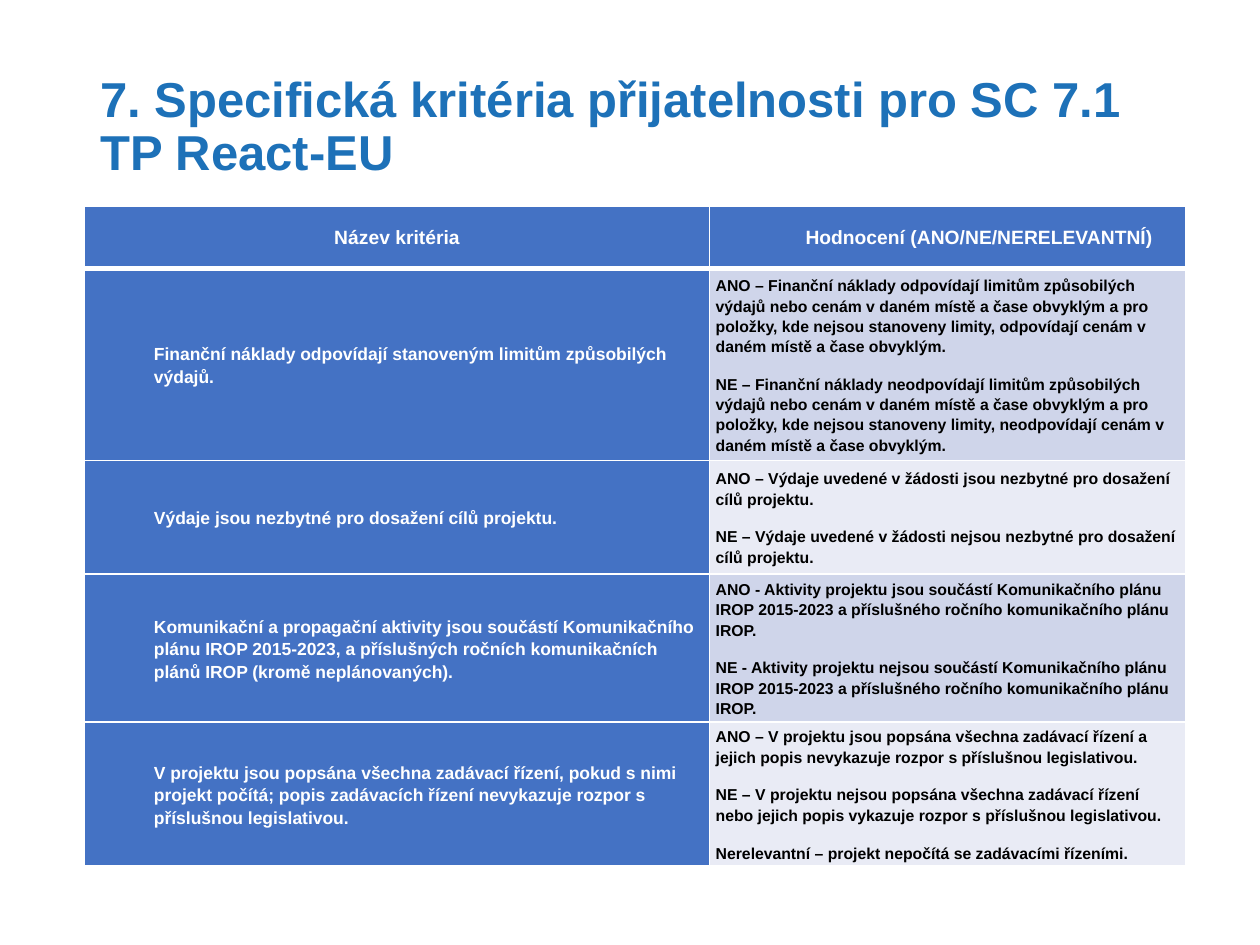
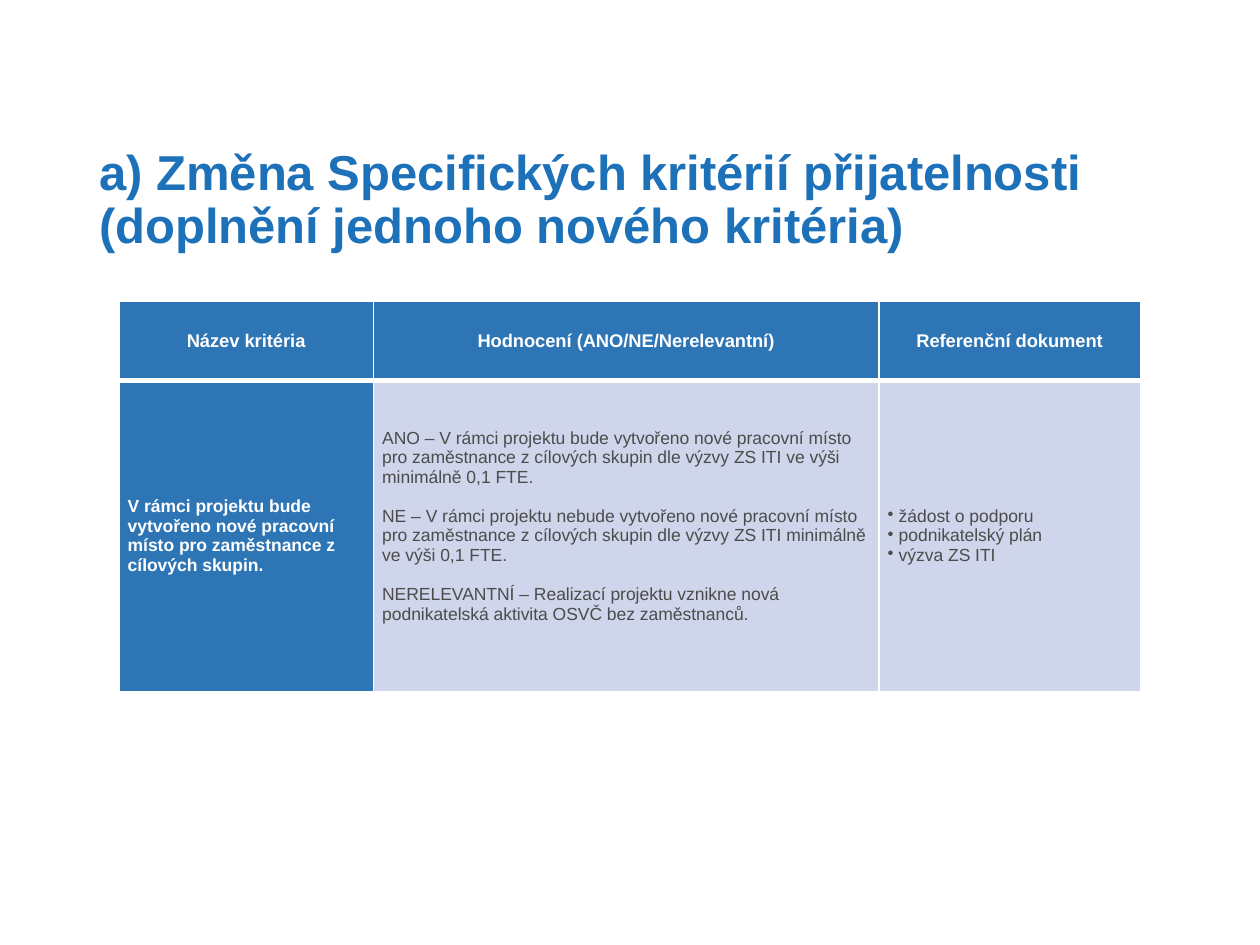
from dataclasses import dataclass

from lxml.etree import SubElement
from pptx import Presentation
from pptx.dml.color import RGBColor
from pptx.enum.text import MSO_ANCHOR as Anchor, PP_ALIGN as Align
from pptx.oxml.ns import qn
from pptx.util import Pt

FONT = "Arial"
TITLE_BLUE = RGBColor(0x1D, 0x71, 0xB8)
CRITERIA_BLUE = RGBColor(0x44, 0x72, 0xC4)
CHANGE_BLUE = RGBColor(0x2E, 0x75, 0xB6)
BAND_DARK = RGBColor(0xCF, 0xD5, 0xEA)
BAND_LIGHT = RGBColor(0xE9, 0xEB, 0xF5)
WHITE = RGBColor(0xFF, 0xFF, 0xFF)
BLACK = RGBColor(0, 0, 0)
GREY = RGBColor(0x4C, 0x4C, 0x4C)
THIN, THICK = 1, 3

CRITERIA = [
    ("Finanční náklady odpovídají stanoveným limitům způsobilých výdajů.",
     ["ANO – Finanční náklady odpovídají limitům způsobilých výdajů nebo cenám v daném místě a čase obvyklým "
      "a pro položky, kde nejsou stanoveny limity, odpovídají cenám v daném místě a čase obvyklým.",
      "NE – Finanční náklady neodpovídají limitům způsobilých výdajů nebo cenám v daném místě a čase obvyklým "
      "a pro položky, kde nejsou stanoveny limity, neodpovídají cenám v daném místě a čase obvyklým."]),
    ("Výdaje jsou nezbytné pro dosažení cílů projektu.",
     ["ANO – Výdaje uvedené v žádosti jsou nezbytné pro dosažení cílů projektu.",
      "NE – Výdaje uvedené v žádosti nejsou nezbytné pro dosažení cílů projektu."]),
    ("Komunikační a propagační aktivity jsou součástí Komunikačního plánu IROP 2015-2023, "
     "a příslušných ročních komunikačních plánů IROP (kromě neplánovaných).",
     ["ANO - Aktivity projektu jsou součástí Komunikačního plánu IROP 2015-2023 "
      "a příslušného ročního komunikačního plánu IROP.",
      "NE - Aktivity projektu nejsou součástí Komunikačního plánu IROP 2015-2023 "
      "a příslušného ročního komunikačního plánu IROP."]),
    ("V projektu jsou popsána všechna zadávací řízení, pokud s nimi projekt počítá; "
     "popis zadávacích řízení nevykazuje rozpor s příslušnou legislativou.",
     ["ANO – V projektu jsou popsána všechna zadávací řízení a jejich popis nevykazuje rozpor "
      "s příslušnou legislativou.",
      "NE – V projektu nejsou popsána všechna zadávací řízení nebo jejich popis vykazuje rozpor "
      "s příslušnou legislativou.",
      "Nerelevantní – projekt nepočítá se zadávacími řízeními."]),
]

NEW_CRITERION = "V rámci projektu bude vytvořeno nové pracovní místo pro zaměstnance z cílových skupin."
NEW_RATINGS = [
    "ANO – V rámci projektu bude vytvořeno nové pracovní místo pro zaměstnance z cílových skupin "
    "dle výzvy ZS ITI ve výši minimálně 0,1 FTE.",
    "NE – V rámci projektu nebude vytvořeno nové pracovní místo pro zaměstnance z cílových skupin "
    "dle výzvy ZS ITI minimálně ve výši 0,1 FTE.",
    "NERELEVANTNÍ – Realizací projektu vznikne nová podnikatelská aktivita OSVČ bez zaměstnanců.",
]
REFERENCES = ["žádost o podporu", "podnikatelský plán", "výzva ZS ITI"]


@dataclass
class Style:
    size: float
    color: RGBColor = WHITE
    bold: bool = True
    align: Align = Align.LEFT
    line: float = 1.0
    gap: float = 0
    indent: float = 0
    bullet: bool = False


def write(frame, texts, style):
    for index, text in enumerate(texts):
        paragraph = frame.add_paragraph() if index else frame.paragraphs[0]
        paragraph.alignment = style.align
        paragraph.line_spacing = style.line
        if index and style.gap:
            paragraph.space_before = Pt(style.gap)
        properties = paragraph._p.get_or_add_pPr()
        if style.indent:
            properties.set("marL", str(Pt(style.indent)))
        if style.bullet:
            properties.set("indent", str(-Pt(style.indent)))
            SubElement(properties, qn("a:buChar"), char="•")
        run = paragraph.add_run()
        run.text = text
        run.font.name = FONT
        run.font.size = Pt(style.size)
        run.font.bold = style.bold
        run.font.color.rgb = style.color


def add_title(slide, left, top, text):
    frame = slide.shapes.add_textbox(Pt(left), Pt(top), Pt(619), Pt(115)).text_frame
    frame.word_wrap = True
    frame.vertical_anchor = Anchor.MIDDLE
    write(frame, [text], Style(28, TITLE_BLUE, line=0.9))


def add_grid(slide, left, top, widths, heights):
    grid = slide.shapes.add_table(len(heights), len(widths), Pt(left), Pt(top),
                                  Pt(sum(widths)), Pt(sum(heights))).table
    grid.first_row = grid.horz_banding = False
    for column, width in zip(grid.columns, widths):
        column.width = Pt(width)
    for row, height in zip(grid.rows, heights):
        row.height = Pt(height)
    for index, row in enumerate(grid.rows):
        for cell in row.cells:
            add_borders(cell, THICK if index == 1 else THIN, THICK if index == 0 else THIN)
    return grid


def add_borders(cell, top, bottom):
    properties = cell._tc.get_or_add_tcPr()
    for side, width in (("L", THIN), ("R", THIN), ("T", top), ("B", bottom)):
        edge = SubElement(properties, qn(f"a:ln{side}"), w=str(Pt(width)))
        paint = SubElement(edge, qn("a:solidFill"))
        SubElement(paint, qn("a:srgbClr"), val=str(WHITE))


def fill_cell(cell, texts, style, fill, side, edge, bottom=None):
    cell.fill.solid()
    cell.fill.fore_color.rgb = fill
    cell.vertical_anchor = Anchor.MIDDLE
    cell.margin_left = cell.margin_right = Pt(side)
    cell.margin_top = Pt(edge)
    cell.margin_bottom = Pt(edge if bottom is None else bottom)
    write(cell.text_frame, texts, style)


def build_criteria(slide):
    add_title(slide, 50.4, 15.8, "7. Specifická kritéria přijatelnosti pro SC 7.1 TP React-EU")
    grid = add_grid(slide, 48.4, 117.6, [357, 272.3], [36, 106.5, 64.8, 82, 79.2])
    margins = (3.6, 0)
    for column, (heading, indent) in enumerate([("Název kritéria", 0),
                                                ("Hodnocení (ANO/NE/NERELEVANTNÍ)", 36)]):
        fill_cell(grid.cell(0, column), [heading],
                  Style(11, align=Align.CENTER, indent=indent), CRITERIA_BLUE, *margins)
    name_style = Style(10, line=1.15, indent=36)
    rating_style = Style(9, BLACK, line=1.15, gap=10)
    for row, (name, ratings) in enumerate(CRITERIA, start=1):
        fill_cell(grid.cell(row, 0), [name], name_style, CRITERIA_BLUE, *margins)
        band = BAND_DARK if row % 2 else BAND_LIGHT
        fill_cell(grid.cell(row, 1), ratings, rating_style, band, *margins)


def build_change(slide):
    add_title(slide, 49.7, 57.6,
              "a) Změna Specifických kritérií přijatelnosti (doplnění jednoho nového kritéria)")
    grid = add_grid(slide, 68, 172.3, [145.4, 288.9, 149.5], [45, 178])
    margins = (5, 2.7)
    headings = ["Název kritéria", "Hodnocení (ANO/NE/Nerelevantní)", "Referenční dokument"]
    for column, heading in enumerate(headings):
        fill_cell(grid.cell(0, column), [heading], Style(10.5, align=Align.CENTER),
                  CHANGE_BLUE, *margins)
    name, ratings, references = grid.rows[1].cells
    fill_cell(name, [NEW_CRITERION], Style(10), CHANGE_BLUE, *margins)
    fill_cell(ratings, NEW_RATINGS, Style(10, GREY, False, gap=11.2), BAND_DARK, *margins, bottom=14)
    fill_cell(references, REFERENCES, Style(10, GREY, False, indent=6.3, bullet=True),
              BAND_DARK, *margins)


def main():
    deck = Presentation()
    deck.slide_width, deck.slide_height = Pt(720), Pt(540)
    blank = deck.slide_layouts[6]
    for build in (build_criteria, build_change):
        build(deck.slides.add_slide(blank))
    deck.save("out.pptx")


if __name__ == "__main__":
    main()
